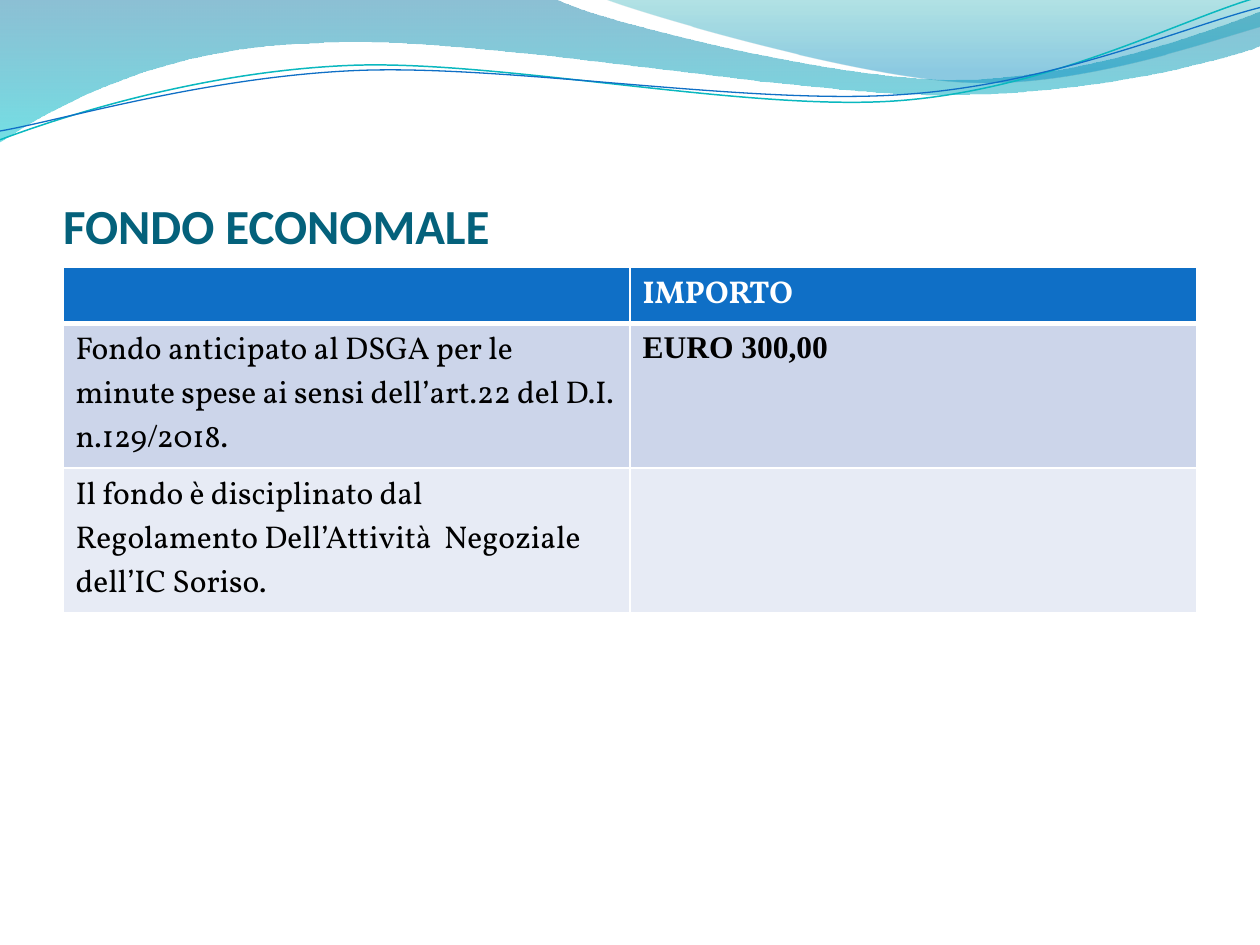
"""Build the slide on the petty cash fund, with its wave header and table."""
from lxml import etree
from pptx import Presentation
from pptx.dml.color import RGBColor
from pptx.enum.text import MSO_ANCHOR, PP_ALIGN
from pptx.oxml import parse_xml
from pptx.oxml.ns import qn
from pptx.util import Inches, Pt

BOTTOM = MSO_ANCHOR.BOTTOM
LEFT = PP_ALIGN.LEFT
NAMESPACE = "http://schemas.openxmlformats.org/drawingml/2006/main"
BODY_FONT = "Vollkorn"
ROW_HEIGHT = 0.41
COLORS = {
    "title": "04617B", "header": "0F6FC6", "odd_row": "CCD5EA", "even_row": "E7EBF5",
    "white": "FFFFFF", "black": "000000", "teal_line": "0AB8BF", "blue_line": "0F6FC6",
    "deep_blue": "0074A1", "cyan": "00C6CF", "teal": "00A1A9", "sky": "008BBF",
}
BANDS = [
    ((0, 0), [
        [(4.4, -0.01)],
        [(4.76, 0.17), (6.64, 0.63), (7.58, 0.63)],
        [(8.53, 0.63), (9.58, 0.26), (10, 0.09)],
        [(10.01, 0.36)],
        [(9.83, 0.44), (8.7, 0.76), (7.46, 0.75)],
        [(6.22, 0.75), (3.82, 0.28), (2.57, 0.34)],
        [(1.29, 0.36), (0.46, 0.83), (-0.01, 1.13)],
        [(0, 0)],
    ], [(0, "deep_blue", 45), (100, "cyan", 55)]),
    ((4.79, -0.01), [
        [(5.09, 0.11), (6.82, 0.62), (7.69, 0.65)],
        [(8.56, 0.69), (9.61, 0.32), (10, 0.21)],
        [(10, 0)],
        [(4.79, -0.01)],
    ], [(0, "teal", 30), (80, "sky", 45)]),
]
LINES = [
    ((0, 1.11), [
        [(0.48, 0.93), (1.58, 0.57), (2.77, 0.52)],
        [(3.95, 0.47), (5.93, 0.89), (7.13, 0.8)],
        [(8.33, 0.71), (9.38, 0.15), (9.98, -0.02)],
    ], "teal_line", 0.85),
    ((0, 1.04), [
        [(0.47, 0.96), (1.64, 0.61), (2.83, 0.56)],
        [(4.03, 0.51), (5.97, 0.84), (7.17, 0.75)],
        [(8.36, 0.67), (9.41, 0.21), (10, 0.06)],
    ], "blue_line", 0.75),
]
ROWS = [
    ("header", "white", [("", BODY_FONT, True), ("IMPORTO", BODY_FONT, True)]),
    ("odd_row", "black", [
        ("Fondo anticipato al DSGA per le minute spese ai sensi dell’art.22 del D.I. n.129/2018.",
         BODY_FONT, False),
        ("EURO 300,00", "Times New Roman", True)]),
    ("even_row", "black", [
        ("Il fondo è disciplinato dal  Regolamento Dell’Attività  Negoziale dell’IC Soriso.",
         BODY_FONT, False),
        ("", BODY_FONT, False)]),
]


def color(name):
    """Return the named colour."""
    return RGBColor.from_string(COLORS[name])


def bend_segments(shape, segments):
    """Merge each three-point segment of a freeform into one Bézier curve."""
    steps = iter(list(shape.element.iter(qn("a:lnTo"))))
    for segment in segments:
        first = next(steps)
        if len(segment) == 1:
            continue
        first.tag = qn("a:cubicBezTo")
        for step in (next(steps), next(steps)):
            first.append(step[0])
            step.getparent().remove(step)


def add_wave(slide, start, segments, closed):
    """Add a curved freeform that follows the segments."""
    builder = slide.shapes.build_freeform(Inches(start[0]), Inches(start[1]))
    points = [(Inches(x), Inches(y)) for segment in segments for x, y in segment]
    builder.add_line_segments(points, close=closed)
    shape = builder.convert_to_shape()
    bend_segments(shape, segments)
    shape.shadow.inherit = False
    shape.fill.background()
    shape.line.fill.background()
    return shape


def add_band(slide, start, segments, stops):
    """Add a closed wave with a translucent vertical gradient."""
    shape = add_wave(slide, start, segments, True)
    stop_xml = "".join(
        f'<a:gs pos="{position * 1000}"><a:srgbClr val="{COLORS[name]}">'
        f'<a:alpha val="{opacity * 1000}"/></a:srgbClr></a:gs>'
        for position, name, opacity in stops)
    gradient = parse_xml(
        f'<a:gradFill xmlns:a="{NAMESPACE}" rotWithShape="1"><a:gsLst>{stop_xml}</a:gsLst>'
        '<a:lin ang="5400000" scaled="0"/></a:gradFill>')
    properties = shape.element.spPr
    properties.replace(properties.find(qn("a:noFill")), gradient)


def add_wave_line(slide, start, segments, color_name, width):
    """Add an open wave drawn as a thin line."""
    shape = add_wave(slide, start, segments, False)
    shape.line.color.rgb = color(color_name)
    shape.line.width = Pt(width)


def format_runs(paragraph, font_name, size, color_name, bold):
    """Format every run of a paragraph."""
    for run in paragraph.runs:
        run.font.name = font_name
        run.font.size = Pt(size)
        run.font.bold = bold
        run.font.color.rgb = color(color_name)


def set_title(slide, text):
    """Place, fill and format the title placeholder."""
    title = slide.shapes.title
    title.left, title.top = Inches(0.5), Inches(0.77)
    title.width, title.height = Inches(9), Inches(1.25)
    text_frame = title.text_frame
    text_frame.text = text
    text_frame.word_wrap = True
    text_frame.vertical_anchor = BOTTOM
    text_frame.margin_left = text_frame.margin_right = text_frame.margin_bottom = 0
    text_frame.margin_top = Inches(0.05)
    paragraph = text_frame.paragraphs[0]
    paragraph.alignment = LEFT
    format_runs(paragraph, "Calibri", 28, "title", True)


def set_borders(cell, widths):
    """Give a cell white borders, with widths in points by side."""
    properties = cell._tc.get_or_add_tcPr()
    for side, width in widths.items():
        border = etree.SubElement(properties, qn(f"a:ln{side}"), w=str(Pt(width)))
        fill = etree.SubElement(border, qn("a:solidFill"))
        etree.SubElement(fill, qn("a:srgbClr"), val=COLORS["white"])


def add_fund_table(slide):
    """Add the table of the fund."""
    frame = slide.shapes.add_table(
        len(ROWS), 2, Inches(0.5), Inches(2.12), Inches(9), Inches(ROW_HEIGHT * len(ROWS)))
    frame.height = Inches(2.11)
    for row, (fill_name, text_color, contents) in zip(frame.table.rows, ROWS):
        for cell, (text, font_name, bold) in zip(row.cells, contents):
            if fill_name == "header":
                set_borders(cell, {"L": 1, "R": 1, "T": 1, "B": 3})
            cell.fill.solid()
            cell.fill.fore_color.rgb = color(fill_name)
            if text:
                cell.text_frame.text = text
                format_runs(cell.text_frame.paragraphs[0], font_name, 18, text_color, bold)


def main():
    """Build and save the presentation."""
    presentation = Presentation()
    presentation.slide_width, presentation.slide_height = Inches(10), Inches(7.5)
    slide = presentation.slides.add_slide(presentation.slide_layouts[5])
    for band in BANDS:
        add_band(slide, *band)
    for line in LINES:
        add_wave_line(slide, *line)
    set_title(slide, "FONDO ECONOMALE")
    add_fund_table(slide)
    presentation.save("out.pptx")


if __name__ == "__main__":
    main()
